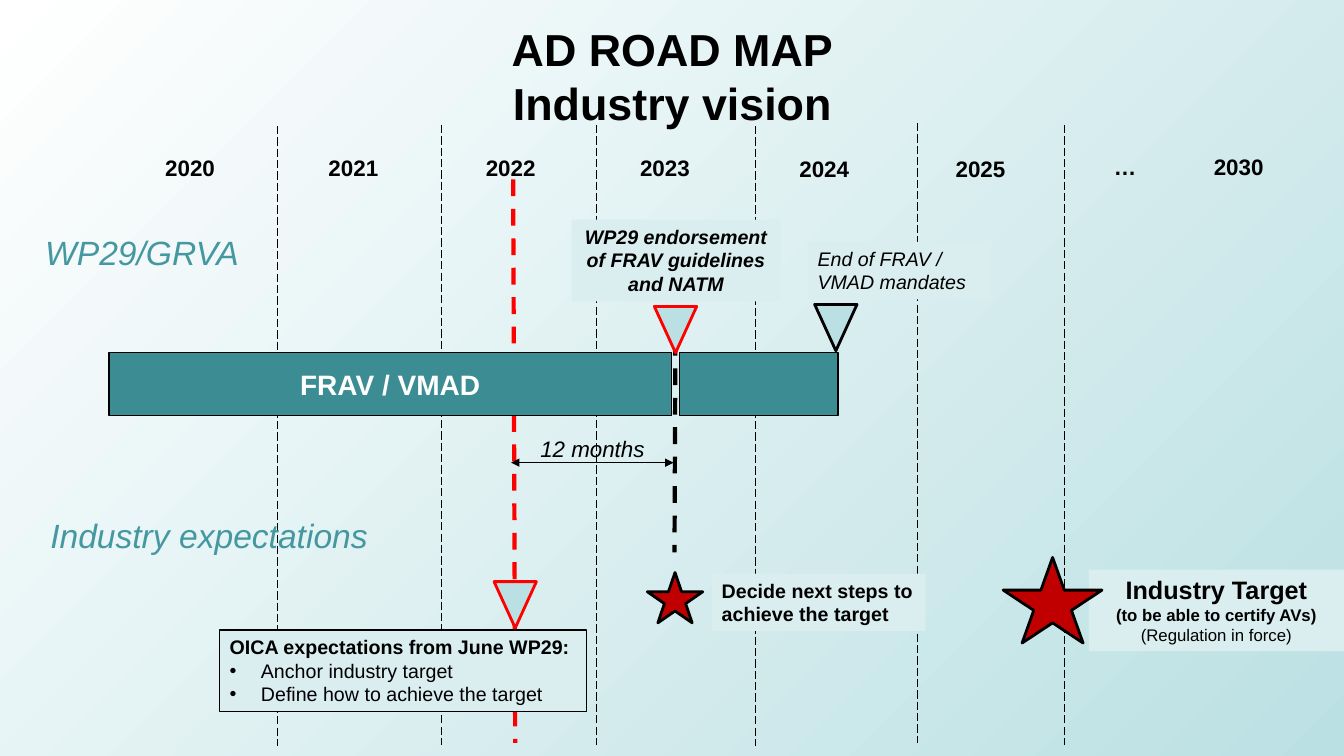
from dataclasses import dataclass

from lxml.etree import SubElement
from pptx import Presentation
from pptx.dml.color import RGBColor
from pptx.enum.dml import MSO_LINE_DASH_STYLE as Dash
from pptx.enum.shapes import MSO_CONNECTOR, MSO_SHAPE as Shape
from pptx.enum.text import MSO_ANCHOR as Anchor, MSO_AUTO_SIZE as AutoSize, PP_ALIGN as Align
from pptx.oxml.ns import qn
from pptx.util import Inches, Pt


@dataclass(frozen=True)
class Theme:
    font: str = "Arial"
    black: str = "000000"
    white: str = "FFFFFF"
    red: str = "FF0000"
    star: str = "C00000"
    bar: str = "3C8C93"
    heading: str = "4597A0"
    pale: str = "BBE0E3"
    panel: str = "DAEDEF"
    title_size: int = 32
    heading_size: int = 24
    bar_size: int = 20
    target_size: int = 18
    year_size: int = 16
    note_size: int = 14
    small_size: int = 12


THEME = Theme()


@dataclass(frozen=True)
class Line:
    """One paragraph and its look."""
    text: str
    size: int = THEME.note_size
    bold: bool = False
    italic: bool = False
    color: str = THEME.black
    bullet: bool = False


def rgb(value):
    return RGBColor.from_string(value)


def add_bullet(para):
    properties = para._p.get_or_add_pPr()
    indent = Inches(0.31)
    properties.set("marL", str(indent))
    properties.set("indent", str(-indent))
    SubElement(properties, qn("a:buFont"), typeface=THEME.font)
    SubElement(properties, qn("a:buChar"), char="•")


def write(shape, lines, align=Align.LEFT, anchor=Anchor.TOP, wrap=True, grow=True):
    frame = shape.text_frame
    frame.word_wrap = wrap
    frame.auto_size = AutoSize.SHAPE_TO_FIT_TEXT if grow else AutoSize.NONE
    frame.vertical_anchor = anchor
    for index, line in enumerate(lines):
        para = frame.add_paragraph() if index else frame.paragraphs[0]
        para.text = line.text
        para.alignment = align
        if line.bullet:
            add_bullet(para)
        for span in para.runs:
            span.font.name = THEME.font
            span.font.size = Pt(line.size)
            span.font.bold = line.bold
            span.font.italic = line.italic
            span.font.color.rgb = rgb(line.color)


def add_figure(page, kind, place, fill, outline=None, width=1):
    shape = page.shapes.add_shape(kind, *map(Inches, place))
    shape.shadow.inherit = False
    shape.fill.solid()
    shape.fill.fore_color.rgb = rgb(fill)
    if outline:
        shape.line.color.rgb = rgb(outline)
        shape.line.width = Pt(width)
    else:
        shape.line.fill.background()
    return shape


def add_panel(page, place, lines, align=Align.LEFT, outline=None):
    panel = add_figure(page, Shape.RECTANGLE, place, THEME.panel, outline, 0.75)
    write(panel, lines, align)


def add_bar(page, left, width):
    return add_figure(page, Shape.RECTANGLE, (left, 3.5, width, 0.62), THEME.bar, THEME.black)


def add_marker(page, left, top, outline):
    """Triangle pointing down at a date."""
    marker = add_figure(page, Shape.ISOSCELES_TRIANGLE, (left, top, 0.42, 0.46), THEME.pale, outline, 2)
    marker.rotation = 180


def add_star(page, place):
    add_figure(page, Shape.STAR_5_POINT, place, THEME.star, THEME.black, 2)


def add_label(page, place, line):
    box = page.shapes.add_textbox(*map(Inches, place))
    write(box, [line], wrap=False)


def add_line(page, start, end, color=THEME.black, width=0.75, dash=None, arrows=False):
    line = page.shapes.add_connector(MSO_CONNECTOR.STRAIGHT, *map(Inches, start + end))
    line.line.color.rgb = rgb(color)
    line.line.width = Pt(width)
    if dash:
        line.line.dash_style = dash
    if arrows:
        outline = line.line._get_or_add_ln()
        for tip in ("a:headEnd", "a:tailEnd"):
            SubElement(outline, qn(tip), type="triangle")
    SubElement(line._element.spPr, qn("a:effectLst"))


def add_background(page):
    fill = page.background.fill
    fill.gradient()
    fill.gradient_angle = 315
    for stop, color in zip(fill.gradient_stops, (THEME.white, THEME.pale)):
        stop.color.rgb = rgb(color)


def add_calendar(page):
    for x, top in ((9.1, 1.22), (5.92, 1.24), (2.75, 1.25), (4.38, 1.24), (7.49, 1.25), (10.56, 1.24)):
        add_line(page, (x, top), (x, top + 6.15), dash=Dash.LONG_DASH)
    title = page.shapes.add_textbox(Inches(0.67), Inches(0.17), Inches(12), Inches(1.38))
    write(title, [Line("AD ROAD MAP\vIndustry vision", THEME.title_size, bold=True)], Align.CENTER, grow=False)
    years = (("2020", 1.54, 1.48), ("2021", 3.16, 1.48), ("2022", 4.72, 1.48), ("2023", 6.25, 1.48),
             ("2024", 7.83, 1.49), ("2025", 9.38, 1.49), ("2030", 11.94, 1.47), ("…", 10.95, 1.47))
    for year, left, top in years:
        width = 0.43 if year == "…" else 0.7
        add_label(page, (left, top, width, 0.37), Line(year, THEME.year_size, bold=True))


def add_mandates(page):
    mandate = add_bar(page, 1.08, 5.58)
    write(mandate, [Line("FRAV / VMAD", THEME.bar_size, bold=True, color=THEME.white)],
          Align.CENTER, Anchor.MIDDLE, grow=False)
    add_panel(page, (5.67, 2.18, 2.07, 0.81),
              [Line("WP29 endorsement of FRAV guidelines and NATM", bold=True, italic=True)], Align.CENTER)
    add_line(page, (6.7, 3.07), (6.69, 5.48), width=3, dash=Dash.DASH)
    add_label(page, (5.26, 4.27, 1.25, 0.37), Line("12 months", THEME.year_size, italic=True))
    add_line(page, (5.07, 4.59), (6.68, 4.59), arrows=True)
    add_bar(page, 6.74, 1.57)
    add_marker(page, 6.49, 3.04, THEME.red)
    add_panel(page, (8.01, 2.4, 1.82, 0.57), [Line("End of FRAV / VMAD mandates", italic=True)])
    add_marker(page, 8.08, 3.02, THEME.black)


def add_expectations(page):
    add_star(page, (9.95, 5.53, 0.98, 0.85))
    add_panel(page, (2.18, 6.25, 3.64, 0.81),
              [Line("OICA expectations from June WP29:", bold=True),
               Line("Anchor industry target", bullet=True),
               Line("Define how to achieve the target", bullet=True)], outline=THEME.black)
    add_star(page, (6.42, 5.68, 0.55, 0.5))
    add_panel(page, (7.06, 5.69, 2.12, 0.57), [Line("Decide next steps to achieve the target", bold=True)])
    add_marker(page, 4.9, 5.77, THEME.red)


def main():
    deck = Presentation()
    deck.slide_width, deck.slide_height = Inches(13.33), Inches(7.5)
    page = deck.slides.add_slide(deck.slide_layouts[6])
    add_background(page)
    add_panel(page, (10.8, 5.65, 2.53, 0.81),
              [Line("Industry Target", THEME.target_size, bold=True),
               Line("(to be able to certify AVs)", THEME.small_size, bold=True),
               Line("(Regulation in force)", THEME.small_size)], Align.CENTER)
    add_line(page, (5.09, 1.78), (5.11, 7.37), THEME.red, 3, Dash.DASH)
    add_calendar(page)
    add_mandates(page)
    add_expectations(page)
    for text, place in (("WP29/GRVA", (0.35, 2.25, 2.14, 0.5)),
                        ("Industry expectations", (0.4, 5.06, 3.38, 0.5))):
        add_label(page, place, Line(text, THEME.heading_size, italic=True, color=THEME.heading))
    deck.save("out.pptx")


if __name__ == "__main__":
    main()
